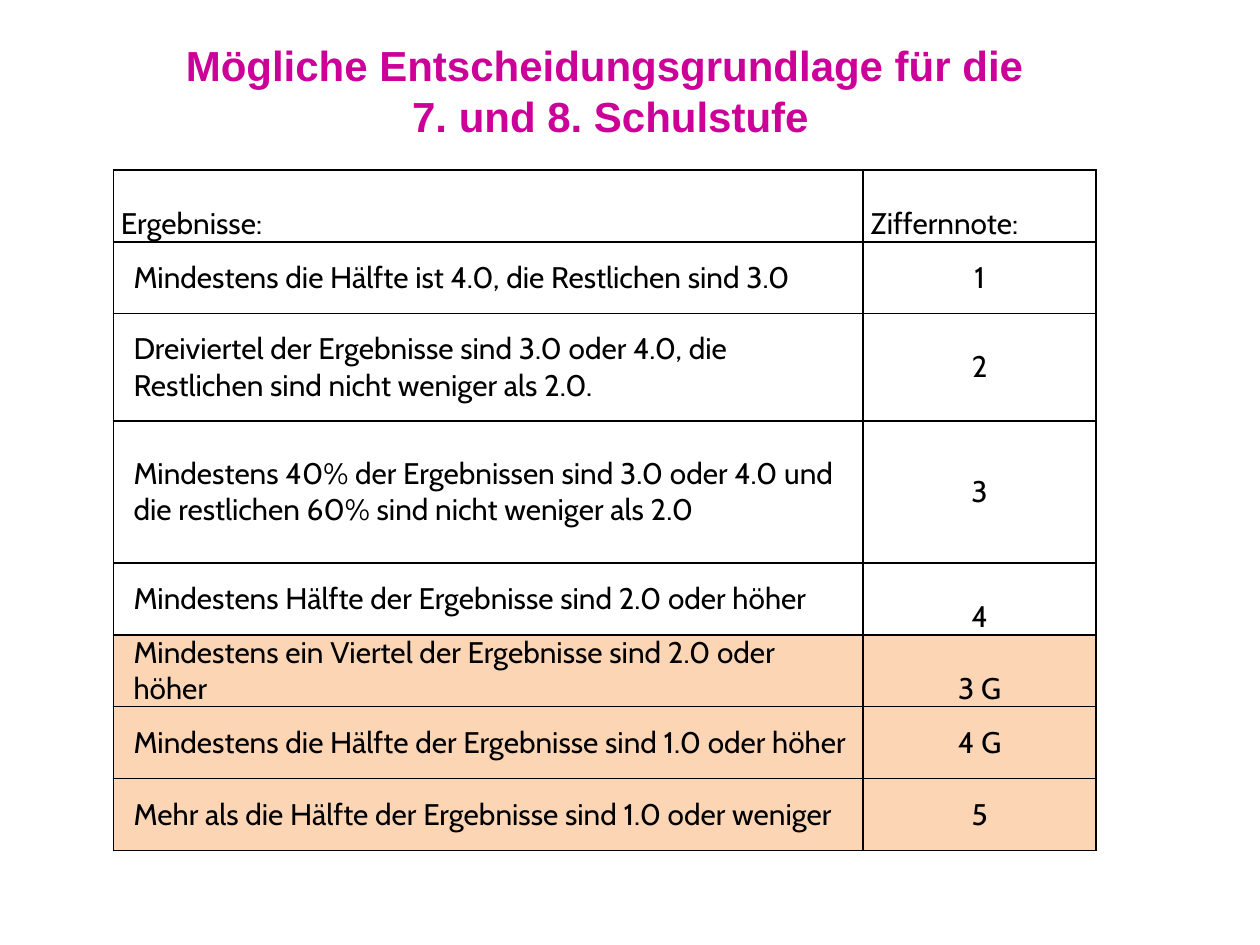
"""Build a slide with a grading table for school years 7 and 8."""
import pptx
import pptx.dml.color
import pptx.enum.text
import pptx.oxml
import pptx.oxml.ns
import pptx.util

Inches = pptx.util.Inches
Pt = pptx.util.Pt
ALIGN = pptx.enum.text.PP_ALIGN
ANCHOR = pptx.enum.text.MSO_ANCHOR
COLORS = {"title": "CC0099", "text": "000000", "border": "000000", "special": "FCD5B5"}


def write_text(frame, text, size=17, font="Cabin", color="text", bold=False,
               align=ALIGN.LEFT, indent=0):
    paragraph = frame.paragraphs[0]
    paragraph.text = text
    paragraph.alignment = align
    paragraph.font.size = Pt(size)
    if indent:
        properties = paragraph._p.get_or_add_pPr()
        properties.set("marL", str(Inches(indent)))
        properties.set("indent", "0")
    for run in paragraph.runs:
        run.font.name = font
        run.font.size = Pt(size)
        run.font.bold = bold
        run.font.color.rgb = pptx.dml.color.RGBColor.from_string(COLORS[color])


def add_borders(cell):
    properties = cell._tc.get_or_add_tcPr()
    for side in ("lnL", "lnR", "lnT", "lnB"):
        properties.append(pptx.oxml.parse_xml(
            f'<a:{side} {pptx.oxml.ns.nsdecls("a")} w="{Pt(1)}"><a:solidFill>'
            f'<a:srgbClr val="{COLORS["border"]}"/></a:solidFill></a:{side}>'))


presentation = pptx.Presentation()
presentation.slide_width = Inches(10)
presentation.slide_height = Inches(7.5)
slide = presentation.slides.add_slide(presentation.slide_layouts[6])

title = slide.shapes.add_textbox(Inches(1.1), Inches(0.32), Inches(7.49), Inches(0.79)).text_frame
title.word_wrap = True
title.vertical_anchor = ANCHOR.MIDDLE
write_text(title, "Mögliche Entscheidungsgrundlage für die \v7. und 8. Schulstufe",
           size=24, font="Arial", color="title", bold=True, align=ALIGN.CENTER)

grading = [
    ("Ergebnisse:", "Ziffernnote:", 0.57),
    ("Mindestens die Hälfte ist 4.0, die Restlichen sind 3.0", "1", 0.57),
    ("Dreiviertel der Ergebnisse sind 3.0 oder 4.0, die Restlichen sind nicht weniger als 2.0.",
     "2", 0.85),
    ("Mindestens 40% der Ergebnissen sind 3.0 oder 4.0 und die restlichen 60% sind nicht "
     "weniger als 2.0", "3", 1.13),
    ("Mindestens Hälfte der Ergebnisse sind 2.0 oder höher", "4", 0.57),
    ("Mindestens ein Viertel der Ergebnisse sind 2.0 oder höher", "3 G", 0.57),
    ("Mindestens die Hälfte der Ergebnisse sind 1.0 oder höher", "4 G", 0.57),
    ("Mehr als die Hälfte der Ergebnisse sind 1.0 oder weniger", "5", 0.57),
]
first_special_row = 5
bottom_grades = ("4", "3 G")

table = slide.shapes.add_table(len(grading), 2, Inches(0.9), Inches(1.35),
                               Inches(7.8), Inches(5.4)).table
table.first_row = False
table.horz_banding = False
table.columns[0].width = Inches(5.95)
table.columns[1].width = Inches(1.85)

for row, (result, grade, height) in enumerate(grading):
    table.rows[row].height = Inches(height)
    for column, text in enumerate((result, grade)):
        cell = table.cell(row, column)
        cell.margin_left = cell.margin_right = Inches(0.06)
        cell.margin_top = cell.margin_bottom = 0
        at_bottom = row == 0 or text in bottom_grades
        cell.vertical_anchor = ANCHOR.BOTTOM if at_bottom else ANCHOR.MIDDLE
        write_text(cell.text_frame, text,
                   align=ALIGN.CENTER if row and column else ALIGN.LEFT,
                   indent=0.1 if row and not column else 0)
        add_borders(cell)
        if row >= first_special_row:
            cell.fill.solid()
            cell.fill.fore_color.rgb = pptx.dml.color.RGBColor.from_string(COLORS["special"])
        else:
            cell.fill.background()

presentation.save("out.pptx")
